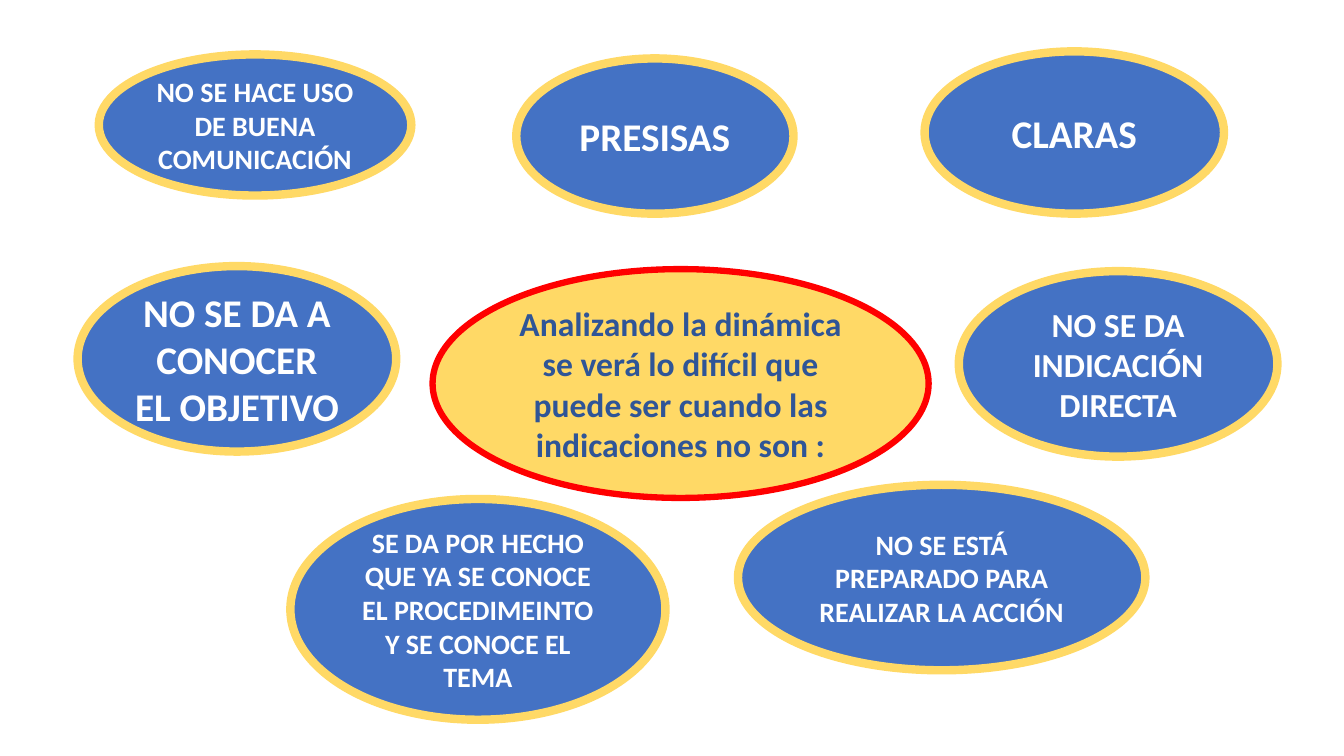
from dataclasses import dataclass

from pptx import Presentation
from pptx.dml.color import RGBColor
from pptx.enum import shapes, text
from pptx.slide import Slide
from pptx.util import Inches, Pt


@dataclass(frozen=True)
class Style:
    fill: str
    line: str
    line_width: float
    font: str


@dataclass(frozen=True)
class Theme:
    font_name: str = "Calibri"
    small: int = 20
    medium: int = 24
    large: int = 28
    center: Style = Style("FFD966", "FF0000", 4.5, "2F5597")
    reason: Style = Style("4472C4", "FFD966", 6, "FFFFFF")


@dataclass(frozen=True)
class Bubble:
    label: str
    left: float
    top: float
    width: float
    height: float
    size: int
    style: Style


THEME = Theme()
CENTER = Bubble(
    "Analizando la dinámica se verá lo difícil que puede ser cuando las indicaciones no son :",
    4.29, 2.67, 4.92, 2.27, THEME.medium, THEME.center)
REASONS = [
    Bubble(*reason, THEME.reason)
    for reason in (
        ("NO SE HACE USO DE BUENA COMUNICACIÓN", 0.98, 0.54, 3.1, 1.4, THEME.small),
        ("PRESISAS", 5.12, 0.58, 2.75, 1.54, THEME.large),
        ("NO SE ESTÁ PREPARADO PARA REALIZAR LA ACCIÓN", 7.32, 4.81, 4.04, 1.84, THEME.small),
        ("CLARAS", 9.17, 0.51, 2.97, 1.61, THEME.large),
        ("NO SE DA A CONOCER EL OBJETIVO", 0.77, 2.64, 3.16, 1.84, THEME.large),
        ("NO SE DA INDICACIÓN DIRECTA", 9.51, 2.69, 3.16, 1.84, THEME.medium),
        ("SE DA POR HECHO QUE YA SE CONOCE EL PROCEDIMEINTO Y SE CONOCE EL TEMA",
         2.88, 4.95, 3.72, 2.19, THEME.small),
    )
]


def draw_bubble(slide: Slide, bubble: Bubble) -> None:
    style = bubble.style
    sp = slide.shapes.add_shape(
        shapes.MSO_SHAPE.OVAL, Inches(bubble.left), Inches(bubble.top),
        Inches(bubble.width), Inches(bubble.height))
    sp.shadow.inherit = False
    sp.fill.solid()
    sp.fill.fore_color.rgb = RGBColor.from_string(style.fill)
    sp.line.color.rgb = RGBColor.from_string(style.line)
    sp.line.width = Pt(style.line_width)

    tf = sp.text_frame
    tf.word_wrap = True
    tf.vertical_anchor = text.MSO_ANCHOR.MIDDLE
    tf.text = bubble.label
    p = tf.paragraphs[0]
    p.alignment = text.PP_ALIGN.CENTER
    font = p.runs[0].font
    font.name = THEME.font_name
    font.size = Pt(bubble.size)
    font.bold = True
    font.color.rgb = RGBColor.from_string(style.font)


def main() -> None:
    prs = Presentation()
    prs.slide_width, prs.slide_height = Inches(13.33), Inches(7.5)
    slide = prs.slides.add_slide(prs.slide_layouts.get_by_name("Blank"))
    for bubble in [CENTER, *REASONS]:
        draw_bubble(slide, bubble)
    prs.save("out.pptx")


if __name__ == "__main__":
    main()
